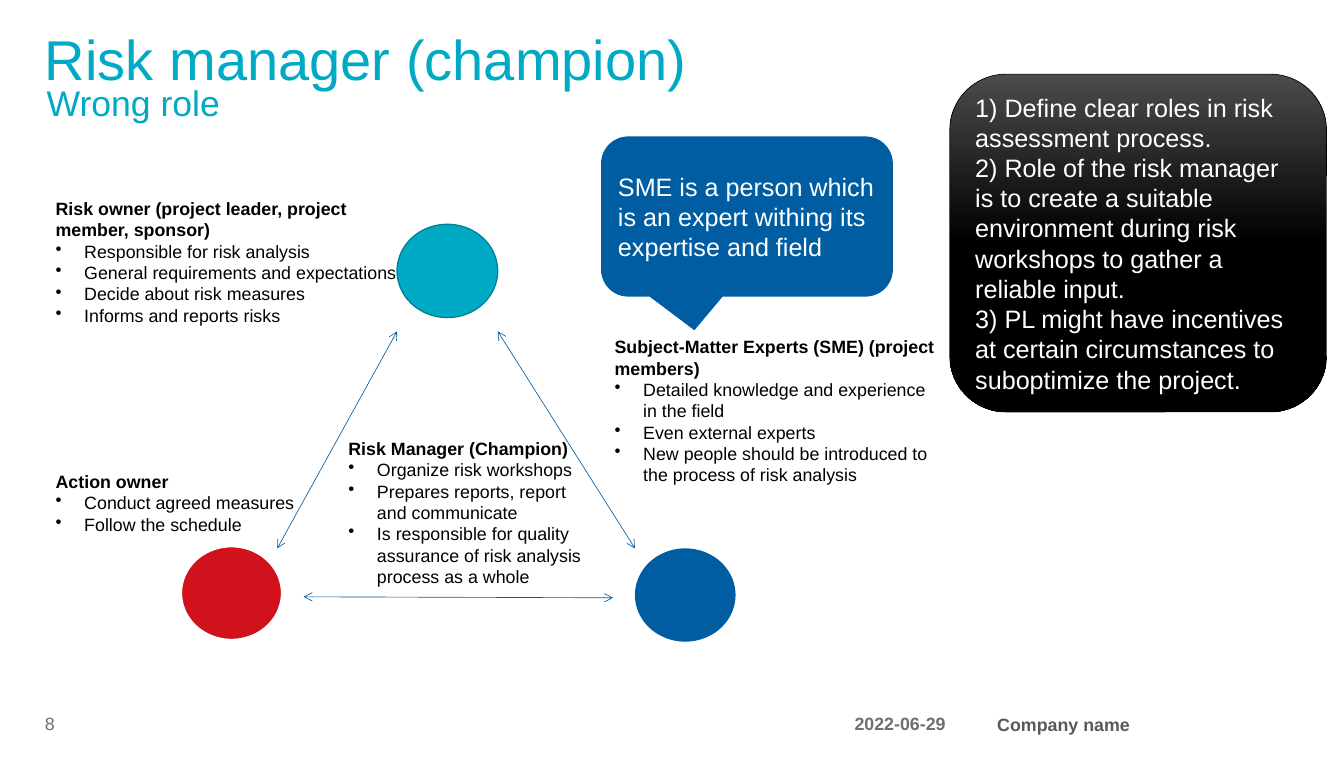
import pptx
import pptx.dml.color
import pptx.enum.shapes
import pptx.enum.text
import pptx.oxml.ns
import pptx.util
from lxml import etree

Pt = pptx.util.Pt
RGB = pptx.dml.color.RGBColor.from_string
SHAPE = pptx.enum.shapes.MSO_SHAPE
ANCHOR = pptx.enum.text.MSO_ANCHOR
qn = pptx.oxml.ns.qn

THEME = {
    "font": "Arial",
    "teal": "00AAC5", "teal_edge": "007E92", "blue": "005DA1", "red": "D1111C",
    "white": "FFFFFF", "black": "000000", "charcoal": "4B4B4B",
    "grey": "6F6F6F", "dark_grey": "595959",
    "title": 44.1, "subtitle": 28, "callout": 19.8, "body": 14,
}


def write(sp, lines, size, color, bold=False, bullets=False, spacing=None, **frame):
    """Fill a shape with paragraphs; with bullets, the first line is a bold heading."""
    tf = sp.text_frame
    for name, value in {"word_wrap": True, **frame}.items():
        setattr(tf, name, value)
    for i, line in enumerate(lines):
        p = tf.paragraphs[0] if i == 0 else tf.add_paragraph()
        p.alignment = pptx.enum.text.PP_ALIGN.LEFT
        if spacing:
            p.line_spacing = Pt(spacing)
        if bullets and i:
            pPr = p._p.get_or_add_pPr()
            pPr.set("marL", str(Pt(22.5)))
            pPr.set("indent", str(Pt(-22.5)))
            etree.SubElement(pPr, qn("a:buChar"), char="•")
        r = p.add_run()
        r.text = line
        style = {"name": THEME["font"], "size": Pt(THEME[size]),
                 "bold": bold or (bullets and i == 0)}
        for name, value in style.items():
            setattr(r.font, name, value)
        r.font.color.rgb = RGB(THEME[color])


def add_shape(kind, box, fill=None, edge=None, width=0):
    sp = s.shapes.add_shape(kind, *map(Pt, box))
    sp.shadow.inherit = False
    if fill:
        sp.fill.solid()
        sp.fill.fore_color.rgb = RGB(THEME[fill])
    if edge:
        sp.line.color.rgb = RGB(THEME[edge])
        sp.line.width = Pt(width)
    else:
        sp.line.fill.background()
    return sp


prs = pptx.Presentation()
prs.slide_width, prs.slide_height = Pt(1057.7), Pt(595.4)
s = prs.slides.add_slide(prs.slide_layouts[6])

# Title, subtitle and footer
NO_MARGINS = dict.fromkeys(("margin_left", "margin_top", "margin_right", "margin_bottom"), 0)
for text, box, size, color, bold, spacing, anchor in [
    ("Risk manager (champion)", (35.3, 21.6, 912, 50.4), "title", "teal", False, 50.7, ANCHOR.BOTTOM),
    ("Wrong role", (36.7, 74.2, 912, 51.8), "subtitle", "teal", False, 23, ANCHOR.TOP),
    ("8", (35.3, 553, 28, 31.7), "body", "grey", False, None, ANCHOR.MIDDLE),
    ("2022-06-29", (672.5, 553, 90, 31.7), "body", "grey", True, None, ANCHOR.MIDDLE),
    ("Company name", (784.8, 553.7, 121.7, 32.4), "body", "dark_grey", True, None, ANCHOR.MIDDLE),
]:
    write(s.shapes.add_textbox(*map(Pt, box)), [text], size, color, bold,
          spacing=spacing, vertical_anchor=anchor, **NO_MARGINS)

# Role circles
for left, top, fill, edge, width in [
    (312.5, 176.4, "teal", "teal_edge", 1),
    (142.6, 429.8, "red", "white", 1.5),
    (499.7, 431.3, "blue", None, 0),
]:
    add_shape(SHAPE.OVAL, (left, top, 79.2, 73.4), fill, edge, width)

# Double-headed arrows between the roles
for ends in [
    (391.7, 260.6, 499.7, 431.3),
    (312.5, 260.6, 218.2, 431.3),
    (482.4, 470.2, 239, 469.4),
]:
    arrow = s.shapes.add_connector(pptx.enum.shapes.MSO_CONNECTOR.STRAIGHT, *map(Pt, ends))
    arrow.line.color.rgb = RGB(THEME["blue"])
    arrow.line.width = Pt(0.5)
    for tag in ("a:headEnd", "a:tailEnd"):
        etree.SubElement(arrow.line._get_or_add_ln(), qn(tag), type="arrow")
    etree.SubElement(arrow._element.spPr, qn("a:effectLst"))

# Role descriptions
for box, lines in [
    ((36.7, 151.9, 283.7, 108.7), [
        "Risk owner (project leader, project member, sponsor)",
        "Responsible for risk analysis",
        "General requirements and expectations",
        "Decide about risk measures",
        "Informs and reports risks"]),
    ((476.6, 260.6, 270, 126), [
        "Subject-Matter Experts (SME) (project members)",
        "Detailed knowledge and experience in the field",
        "Even external experts",
        "New people should be introduced to the process of risk analysis"]),
    ((36.7, 366.5, 210.2, 58.3), [
        "Action owner",
        "Conduct agreed measures",
        "Follow the schedule"]),
    ((267.1, 340.6, 198.7, 126), [
        "Risk Manager (Champion)",
        "Organize risk workshops",
        "Prepares reports, report and communicate",
        "Is responsible for quality assurance of risk analysis process as a whole"]),
]:
    write(s.shapes.add_textbox(*map(Pt, box)), lines, "body", "black", bullets=True,
          auto_size=pptx.enum.text.MSO_AUTO_SIZE.SHAPE_TO_FIT_TEXT)

# SME callout
callout = add_shape(SHAPE.ROUNDED_RECTANGULAR_CALLOUT, (473, 107.3, 229.7, 126), "blue")
for i, value in enumerate((-0.18, 0.71, 0.17)):
    callout.adjustments[i] = value
write(callout, ["SME is a person which is an expert withing its expertise and field"],
      "callout", "white", vertical_anchor=ANCHOR.MIDDLE)

# Recommendations panel
panel = add_shape(SHAPE.ROUNDED_RECTANGLE, (747.4, 58.3, 296.6, 265.7), edge="black", width=0.5)
panel.fill.gradient()
panel.fill.gradient_angle = 270
for stop, color, position in zip(panel.fill.gradient_stops, ("charcoal", "black"), (0, 0.5)):
    stop.color.rgb = RGB(THEME[color])
    stop.position = position
write(panel, [
    "1) Define clear roles in risk assessment process.",
    "2) Role of the risk manager is to create a suitable environment during risk "
    "workshops to gather a reliable input.",
    "3) PL might have incentives at certain circumstances to suboptimize the project.",
], "callout", "white", vertical_anchor=ANCHOR.MIDDLE)

prs.save("out.pptx")
